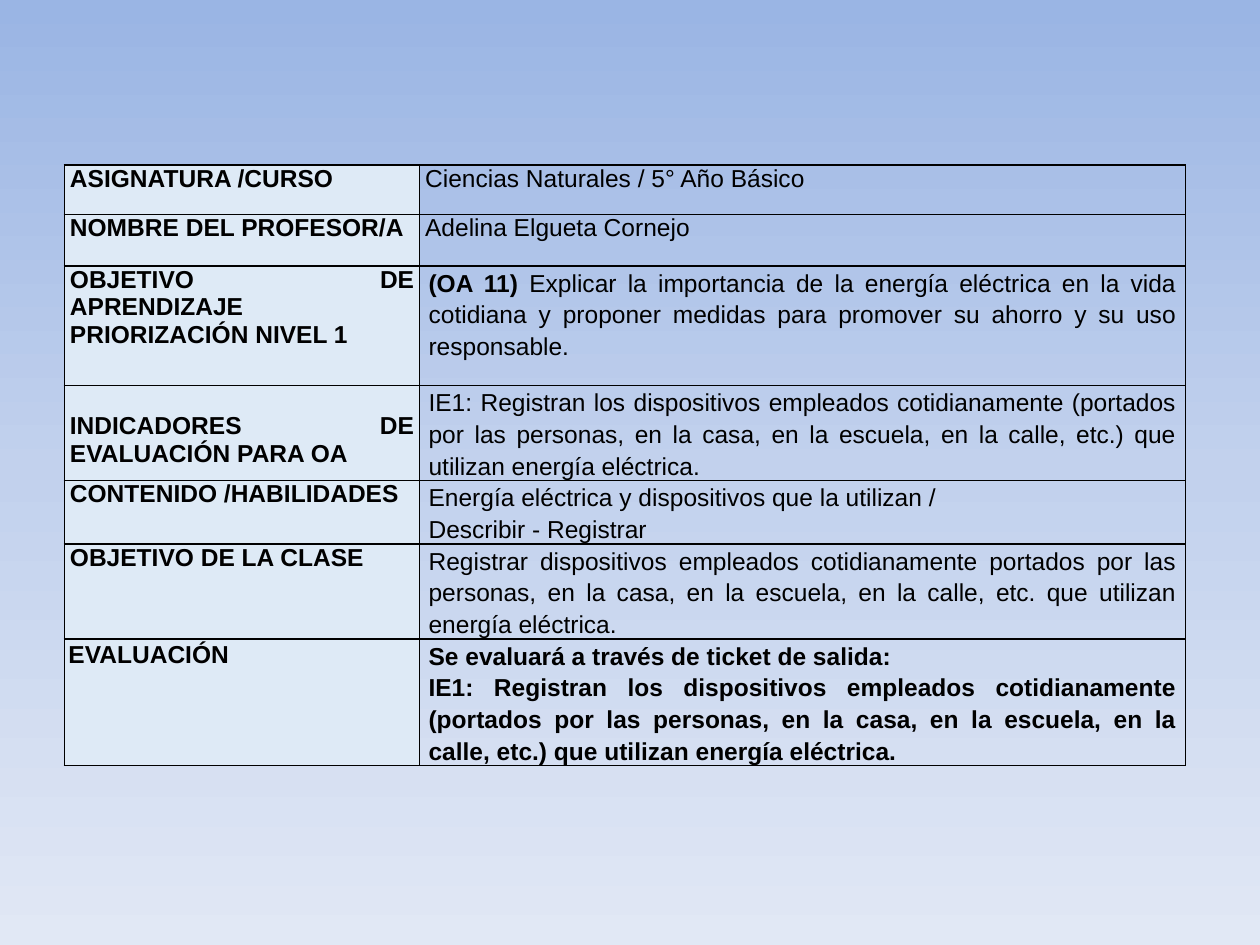
from copy import deepcopy
from dataclasses import dataclass

from lxml.etree import SubElement
from pptx import Presentation
from pptx.dml.color import RGBColor
from pptx.enum.text import PP_ALIGN
from pptx.oxml.ns import qn
from pptx.util import Cm, Pt


@dataclass(frozen=True)
class Theme:
    font: str = "Arial"
    text_size: float = 14
    border_width: float = 1
    text: str = "000000"
    border: str = "000000"
    label_fill: str = "DEEAF6"
    background: tuple = ("9AB5E4", "C2D1ED", "E1E8F5")


INDICATOR = (
    "IE1: Registran los dispositivos empleados cotidianamente (portados por las personas, "
    "en la casa, en la escuela, en la calle, etc.) que utilizan energía eléctrica."
)

# Insets in cm: left and right, top, bottom
NARROW = (0.11, 0, 0)
WIDE = (0.18, 0, 0)
LOWERED = (0.11, 0.55, 0)
EVALUATION = (0.08, 0.05, 0.05)

# Row height, label, label insets, value paragraphs, value format
PLAIN = {"insets": NARROW}
SPACED = {"insets": WIDE, "line_spacing": 1.15}
ROWS = [
    (0.99, "ASIGNATURA /CURSO", NARROW, ["Ciencias Naturales / 5° Año Básico"], PLAIN),
    (1.04, "NOMBRE DEL PROFESOR/A", NARROW, ["Adelina Elgueta Cornejo"], PLAIN),
    (2.41, "OBJETIVO DE APRENDIZAJE PRIORIZACIÓN NIVEL 1", NARROW,
     ["Explicar la importancia de la energía eléctrica en la vida cotidiana y proponer "
      "medidas para promover su ahorro y su uso responsable."],
     {**SPACED, "bold_lead": "(OA 11) "}),
    (1.9, "INDICADORES DE EVALUACIÓN PARA OA", LOWERED, [INDICATOR], SPACED),
    (1.27, "CONTENIDO /HABILIDADES", NARROW,
     ["Energía eléctrica y dispositivos que la utilizan /", "Describir - Registrar"], SPACED),
    (1.91, "OBJETIVO DE LA CLASE", NARROW,
     ["Registrar dispositivos empleados cotidianamente portados por las personas, en la casa, "
      "en la escuela, en la calle, etc. que utilizan energía eléctrica."], SPACED),
    (2.55, "EVALUACIÓN", EVALUATION,
     ["Se evaluará a través de ticket de salida:", INDICATOR], {**SPACED, "bold": True}),
]


def write_text(frame, paragraphs, *, theme, bold=False, bold_lead="", line_spacing=None):
    """Fill a text frame with justified paragraphs, the first with an optional bold lead."""
    for index, text in enumerate(paragraphs):
        paragraph = frame.paragraphs[0] if index == 0 else frame.add_paragraph()
        paragraph.alignment = PP_ALIGN.JUSTIFY
        paragraph.line_spacing = line_spacing
        lead = bold_lead if index == 0 else ""
        for content, weight in ((lead, True), (text, bold)):
            if content:
                run = paragraph.add_run()
                run.text = content
                run.font.name = theme.font
                run.font.size = Pt(theme.text_size)
                run.font.bold = weight
                run.font.color.rgb = RGBColor.from_string(theme.text)


class SlideBuilder:
    def __init__(self, slide, theme):
        self.slide = slide
        self.theme = theme

    def background(self):
        fill = self.slide.background.fill
        fill.gradient()
        fill.gradient_angle = 270
        stop_list = self.slide.element.find(".//" + qn("a:gsLst"))
        stop_list.insert(1, deepcopy(stop_list[0]))
        for index, (stop, color) in enumerate(zip(fill.gradient_stops, self.theme.background)):
            stop.position = index / 2
            stop.color.rgb = RGBColor.from_string(color)

    def borders(self, cell):
        properties = cell._tc.get_or_add_tcPr()
        for side in ("L", "R", "T", "B"):
            line = SubElement(properties, qn(f"a:ln{side}"), w=str(Pt(self.theme.border_width)))
            fill = SubElement(line, qn("a:solidFill"))
            SubElement(fill, qn("a:srgbClr"), val=self.theme.border)

    def cell(self, cell, paragraphs, insets, fill=None, **text_format):
        side, top, bottom = insets
        cell.margin_left = cell.margin_right = Cm(side)
        cell.margin_top, cell.margin_bottom = Cm(top), Cm(bottom)
        self.borders(cell)
        if fill:
            cell.fill.solid()
            cell.fill.fore_color.rgb = RGBColor.from_string(fill)
        else:
            cell.fill.background()
        write_text(cell.text_frame, paragraphs, theme=self.theme, **text_format)

    def table(self, rows, left, top, widths):
        height = sum(row[0] for row in rows)
        table = self.slide.shapes.add_table(
            len(rows), len(widths), Cm(left), Cm(top), Cm(sum(widths)), Cm(height)
        ).table
        table.first_row = table.horz_banding = False
        for column, width in zip(table.columns, widths):
            column.width = Cm(width)
        for index, (height, label, label_insets, values, value_format) in enumerate(rows):
            table.rows[index].height = Cm(height)
            self.cell(table.cell(index, 0), [label], label_insets,
                      fill=self.theme.label_fill, bold=True)
            self.cell(table.cell(index, 1), values, **value_format)


def main():
    presentation = Presentation()
    presentation.slide_width, presentation.slide_height = Cm(25.4), Cm(19.05)
    slide = presentation.slides.add_slide(presentation.slide_layouts[6])
    builder = SlideBuilder(slide, Theme())

    # Blue gradient behind the lesson plan
    builder.background()

    # Lesson plan: labels on the left, contents on the right
    builder.table(ROWS, left=1.3, top=3.33, widths=(7.16, 15.44))

    presentation.save("out.pptx")


if __name__ == "__main__":
    main()
